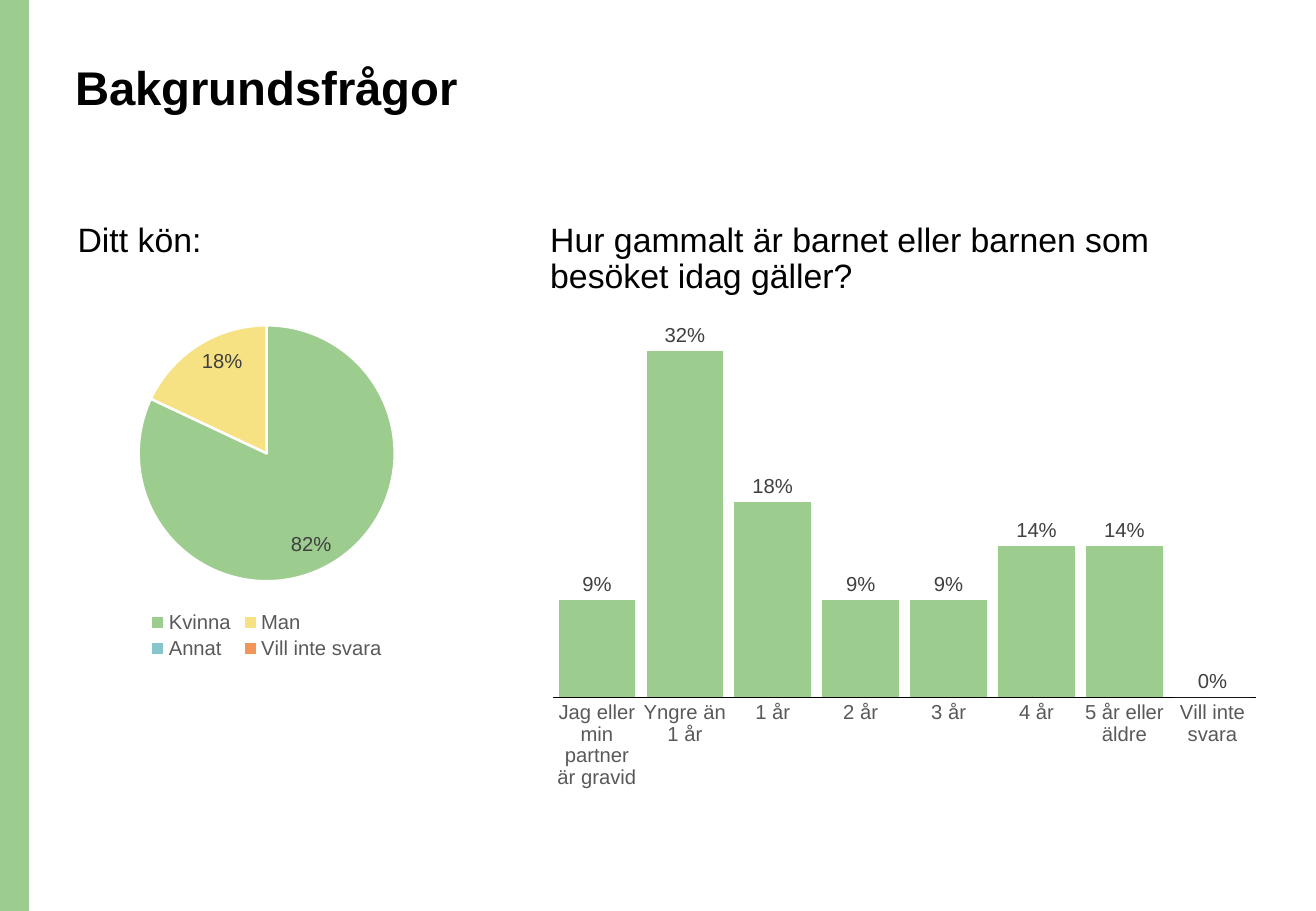
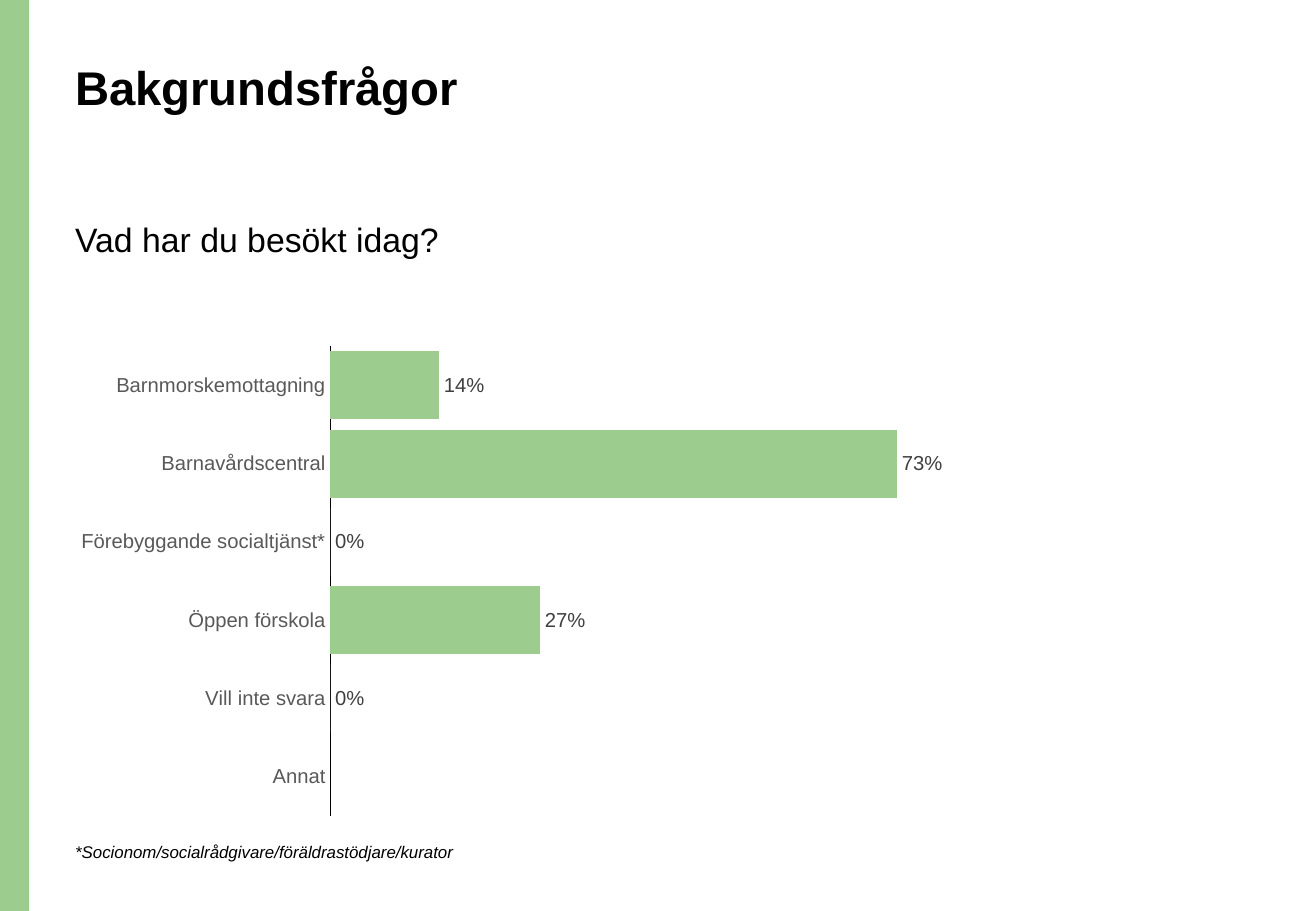
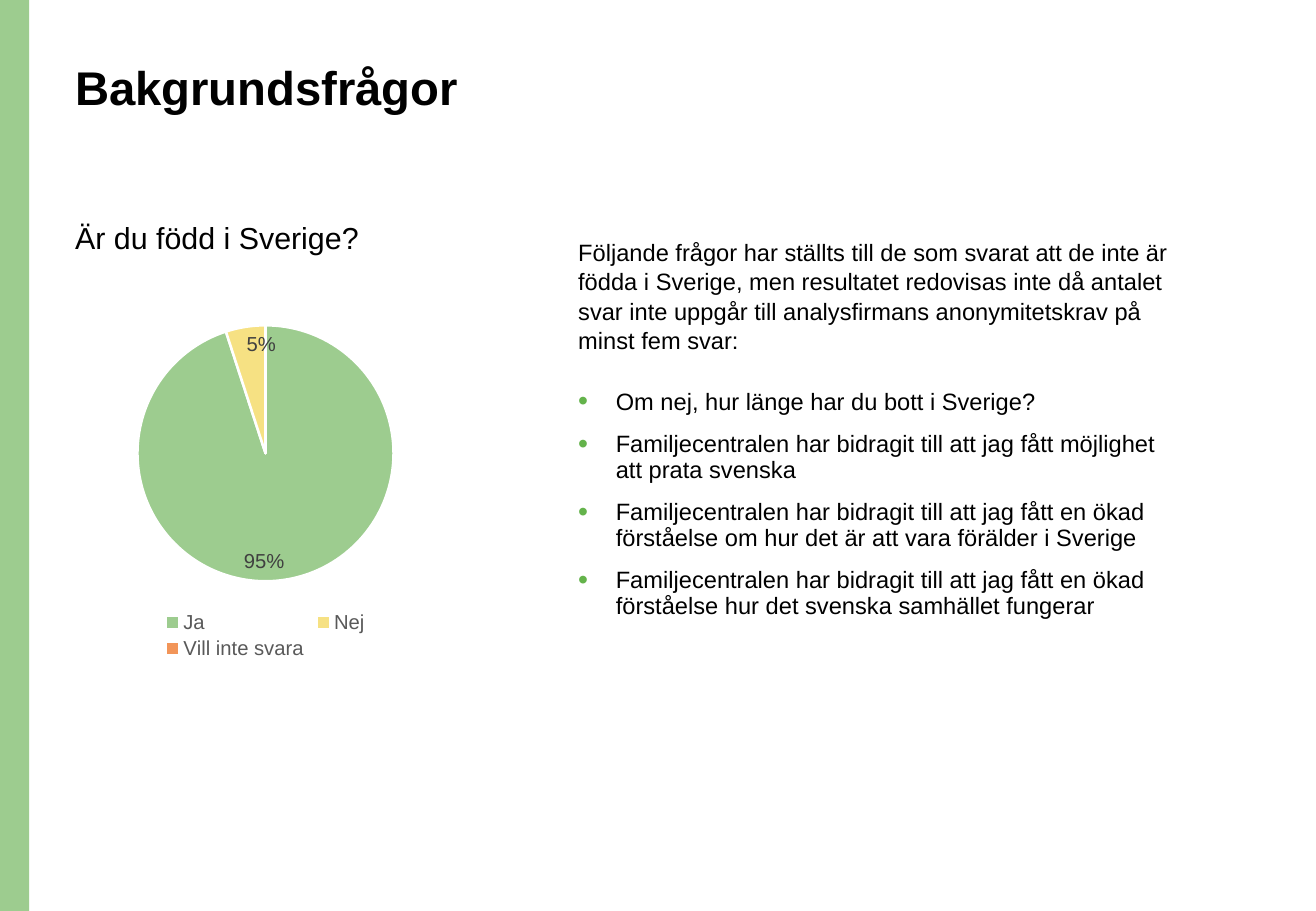
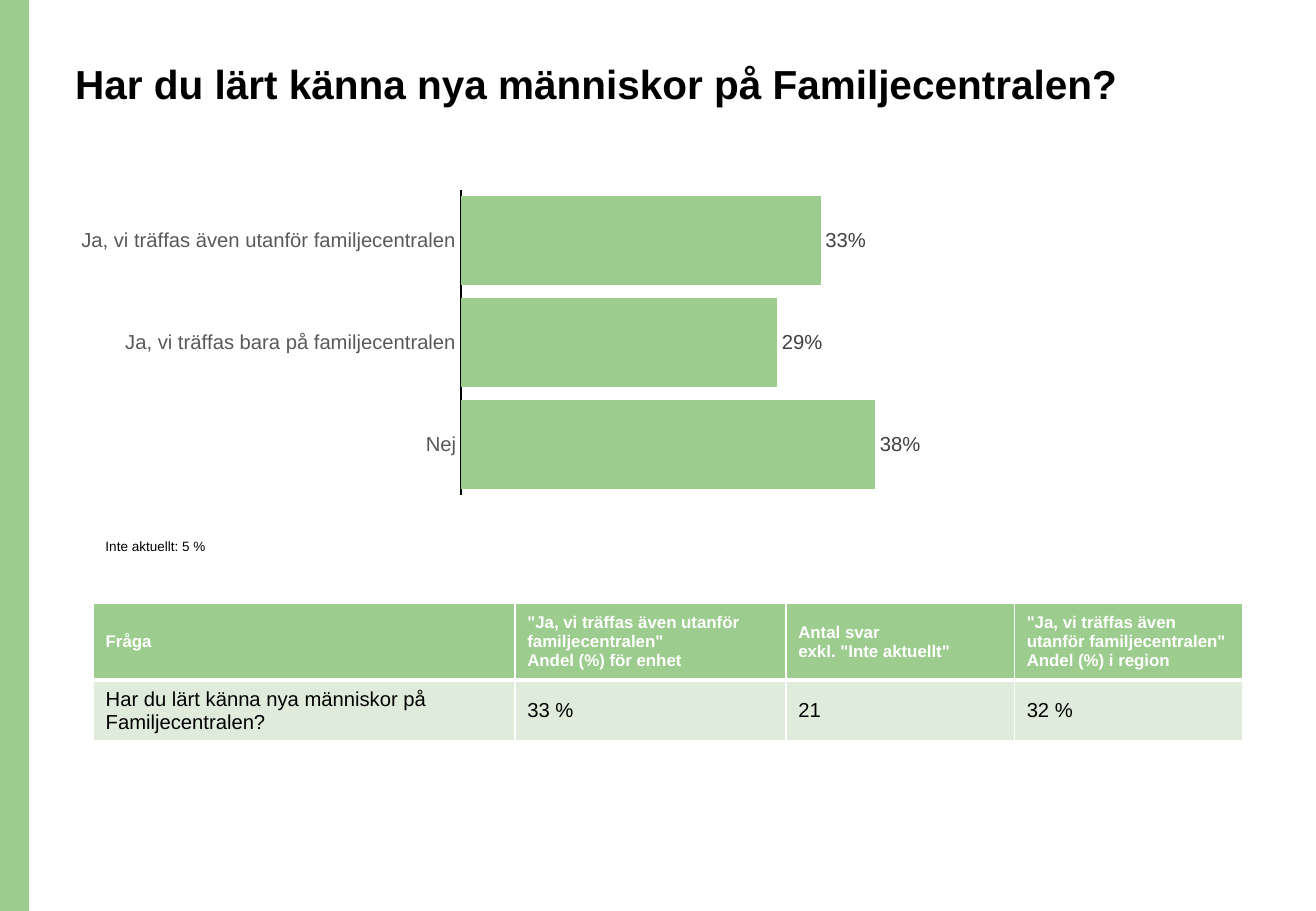
from lxml import etree
from pptx import Presentation
from pptx.chart.data import CategoryChartData
from pptx.dml.color import RGBColor
from pptx.enum.chart import XL_CHART_TYPE as ChartType
from pptx.enum.chart import XL_LABEL_POSITION as LabelPosition
from pptx.enum.chart import XL_LEGEND_POSITION as LegendPosition
from pptx.enum.chart import XL_TICK_MARK as TickMark
from pptx.enum.shapes import MSO_SHAPE as Preset
from pptx.enum.text import MSO_ANCHOR as Anchor
from pptx.oxml.ns import qn
from pptx.util import Inches, Pt


class Theme:
    font = "Arial"
    black = RGBColor(0x00, 0x00, 0x00)
    white = RGBColor(0xFF, 0xFF, 0xFF)
    green = RGBColor(0x9D, 0xCC, 0x8F)
    pale_green = RGBColor(0xDF, 0xEC, 0xDB)
    bullet_green = RGBColor(0x64, 0xB3, 0x4B)
    yellow = RGBColor(0xF6, 0xE1, 0x83)
    blue = RGBColor(0x85, 0xC5, 0xCB)
    orange = RGBColor(0xF2, 0x95, 0x59)
    axis_grey = RGBColor(0x59, 0x59, 0x59)
    label_grey = RGBColor(0x40, 0x40, 0x40)
    title_size = 28
    long_title_size = 24
    question_size = 20
    short_question_size = 18
    body_size = 14
    chart_size = 12
    small_size = 10
    note_size = 8


def add_text(slide, box, lines, size, spacing=1.0, bold=False, italic=False, bullets=False):
    frame = slide.shapes.add_textbox(*map(Inches, box)).text_frame
    frame.word_wrap = True
    frame.text = "\n".join(lines)
    for index, paragraph in enumerate(frame.paragraphs):
        if bullets:
            properties = paragraph._p.get_or_add_pPr()
            properties.set("marL", str(Inches(0.31)))
            properties.set("indent", str(Inches(-0.31)))
            color = etree.SubElement(properties, qn("a:buClr"))
            etree.SubElement(color, qn("a:srgbClr"), val=str(Theme.bullet_green))
            etree.SubElement(properties, qn("a:buSzPct"), val="120000")
            etree.SubElement(properties, qn("a:buFont"), typeface=Theme.font)
            etree.SubElement(properties, qn("a:buChar"), char="•")
        paragraph.line_spacing = spacing
        if index:
            paragraph.space_before = Pt(10)
        font = paragraph.font
        font.name, font.size, font.color.rgb = Theme.font, Pt(size), Theme.black
        font.bold, font.italic = bold, italic


def add_chart(slide, kind, box, values, label_position, label_format):
    data = CategoryChartData(number_format="0%")
    data.categories = list(values)
    data.add_series("Series 1", list(values.values()))
    chart = slide.shapes.add_chart(kind, *map(Inches, box), data).chart
    chart.has_title = False
    chart.has_legend = False
    chart.font.name, chart.font.size = Theme.font, Pt(Theme.chart_size)
    chart.font.color.rgb = Theme.axis_grey
    plot = chart.plots[0]
    plot.has_data_labels = True
    labels = plot.data_labels
    labels.show_value = True
    labels.position = label_position
    labels.number_format = label_format
    labels.number_format_is_linked = False
    labels.font.name, labels.font.size = Theme.font, Pt(Theme.chart_size)
    labels.font.color.rgb = Theme.label_grey
    return chart


presentation = Presentation()
presentation.slide_width = Inches(10.83)
presentation.slide_height = Inches(7.5)

# Slides with green band and title
titles = [("Bakgrundsfrågor", Theme.title_size)] * 3
titles.append(("Har du lärt känna nya människor på Familjecentralen?", Theme.long_title_size))
for title, size in titles:
    slide = presentation.slides.add_slide(presentation.slide_layouts[6])
    band = slide.shapes.add_shape(Preset.RECTANGLE, 0, 0, Inches(0.24), presentation.slide_height)
    band.shadow.inherit = False
    band.fill.solid()
    band.fill.fore_color.rgb = Theme.green
    band.line.fill.background()
    add_text(slide, (0.52, 0.48, 9.34, 1.02), [title], size, 0.9, bold=True)
people, visit, birthplace, contacts = presentation.slides

# Questions
for slide, box, question, size in [
    (people, (0.54, 1.79, 4.58, 0.46), "Ditt kön:", Theme.question_size),
    (people, (4.43, 1.79, 6.03, 0.74),
     "Hur gammalt är barnet eller barnen som besöket idag gäller?", Theme.question_size),
    (visit, (0.52, 1.79, 6.5, 0.74), "Vad har du besökt idag?", Theme.question_size),
    (birthplace, (0.52, 1.79, 4.58, 0.46), "Är du född i Sverige?", Theme.short_question_size),
]:
    add_text(slide, box, [question], size, 0.9)

# Pie charts
for slide, left, slices in [
    (people, 0.53, [("Kvinna", 0.82, Theme.green), ("Man", 0.18, Theme.yellow),
                    ("Annat", 0, Theme.blue), ("Vill inte svara", 0, Theme.orange)]),
    (birthplace, 0.52, [("Ja", 0.95, Theme.green), ("Nej", 0.05, Theme.yellow),
                        ("Vill inte svara", 0, Theme.orange)]),
]:
    values = {name: value for name, value, color in slices}
    chart = add_chart(slide, ChartType.PIE, (left, 2.54, 3.33, 2.93), values,
                      LabelPosition.INSIDE_END, '[<0.01]"";[>0.01]0%')
    chart.has_legend = True
    chart.legend.position = LegendPosition.BOTTOM
    chart.legend.include_in_layout = False
    chart.legend.font.name, chart.legend.font.size = Theme.font, Pt(Theme.chart_size)
    chart.legend.font.color.rgb = Theme.axis_grey
    chart.plots[0].vary_by_categories = True
    for index, (name, value, color) in enumerate(slices):
        point = chart.series[0].points[index].format
        point.fill.solid()
        point.fill.fore_color.rgb = color
        point.line.color.rgb = Theme.white
        point.line.width = Pt(1.5)

# Column and bar charts
child_ages = {
    "Jag eller min partner är gravid": 0.09, "Yngre än 1 år": 0.32, "1 år": 0.18,
    "2 år": 0.09, "3 år": 0.09, "4 år": 0.14, "5 år eller äldre": 0.14, "Vill inte svara": 0,
}
visits = {
    "Barnmorskemottagning": 0.14, "Barnavårdscentral": 0.73, "Förebyggande socialtjänst*": 0,
    "Öppen förskola": 0.27, "Vill inte svara": 0, "Annat": None,
}
new_contacts = {
    "Ja, vi träffas även utanför familjecentralen": 0.33,
    "Ja, vi träffas bara på familjecentralen": 0.29,
    "Nej": 0.38,
}
for slide, kind, box, values, maximum in [
    (people, ChartType.COLUMN_CLUSTERED, (4.43, 2.54, 6.03, 4.03), child_ages, 0.35),
    (visit, ChartType.BAR_CLUSTERED, (0.52, 2.77, 7.46, 4.03), visits, 0.8),
    (contacts, ChartType.BAR_CLUSTERED, (0.52, 1.51, 7.46, 2.62), new_contacts, 0.45),
]:
    chart = add_chart(slide, kind, box, values, LabelPosition.OUTSIDE_END, "0%")
    plot = chart.plots[0]
    plot.vary_by_categories = False
    plot.gap_width = 15
    plot.overlap = -27 if kind == ChartType.COLUMN_CLUSTERED else 0
    fill = chart.series[0].format.fill
    fill.solid()
    fill.fore_color.rgb = Theme.green
    category_axis, value_axis = chart.category_axis, chart.value_axis
    category_axis.reverse_order = kind == ChartType.BAR_CLUSTERED
    category_axis.major_tick_mark = TickMark.NONE
    category_axis.format.line.color.rgb = Theme.black
    category_axis.format.line.width = Pt(0.75)
    value_axis.minimum_scale = 0
    value_axis.maximum_scale = maximum
    value_axis.has_major_gridlines = False
    value_axis.visible = False

# Notes below the bar charts
add_text(visit, (0.52, 6.88, 5.42, 0.27),
         ["*Socionom/socialrådgivare/föräldrastödjare/kurator"], Theme.small_size, italic=True)
add_text(contacts, (0.77, 4.31, 2.1, 0.28), ["Inte aktuellt: 5 %"], Theme.note_size, 1.5)

# Follow-up questions
add_text(birthplace, (4.66, 1.9, 5.21, 1.04), [
    "Följande frågor har ställts till de som svarat att de inte är födda i Sverige, men "
    "resultatet redovisas inte då antalet svar inte uppgår till analysfirmans "
    "anonymitetskrav på minst fem svar:",
], Theme.body_size, 1.04)
add_text(birthplace, (4.66, 3.16, 5.03, 2.07), [
    "Om nej, hur länge har du bott i Sverige?",
    "Familjecentralen har bidragit till att jag fått möjlighet att prata svenska",
    "Familjecentralen har bidragit till att jag fått en ökad förståelse om hur det är att "
    "vara förälder i Sverige",
    "Familjecentralen har bidragit till att jag fått en ökad förståelse hur det svenska "
    "samhället fungerar",
], Theme.body_size, 0.9, bullets=True)

# Comparison table
rows = [
    ["Fråga",
     '"Ja, vi träffas även utanför familjecentralen"\nAndel (%) för enhet',
     'Antal svar\nexkl. "Inte aktuellt"',
     '"Ja, vi träffas även utanför familjecentralen"\nAndel (%) i region'],
    ["Har du lärt känna nya människor på Familjecentralen?", "33 %", "21", "32 %"],
]
row_styles = [
    (0.63, Theme.green, Theme.white, Theme.small_size, True),
    (0.47, Theme.pale_green, Theme.black, Theme.chart_size, False),
]
table = contacts.shapes.add_table(2, 4, Inches(0.77), Inches(4.97), Inches(9.46), Inches(1.1)).table
for column, width in zip(table.columns, [3.47, 2.23, 1.88, 1.88]):
    column.width = Inches(width)
for row, texts, (height, fill_color, text_color, size, is_header) in zip(table.rows, rows, row_styles):
    row.height = Inches(height)
    for cell, text in zip(row.cells, texts):
        cell.text = text
        cell.vertical_anchor = Anchor.MIDDLE
        for paragraph in cell.text_frame.paragraphs:
            font = paragraph.font
            font.name, font.size, font.bold = Theme.font, Pt(size), is_header
            font.color.rgb = text_color
        properties = cell._tc.get_or_add_tcPr()
        divider = 3 if is_header else 1
        top = 1 if is_header else 3
        for side, points in [("L", 1), ("R", 1), ("T", top), ("B", divider)]:
            border = etree.SubElement(properties, qn(f"a:ln{side}"), w=str(Pt(points)))
            border_fill = etree.SubElement(border, qn("a:solidFill"))
            etree.SubElement(border_fill, qn("a:srgbClr"), val=str(Theme.white))
        cell.fill.solid()
        cell.fill.fore_color.rgb = fill_color

presentation.save("out.pptx")
